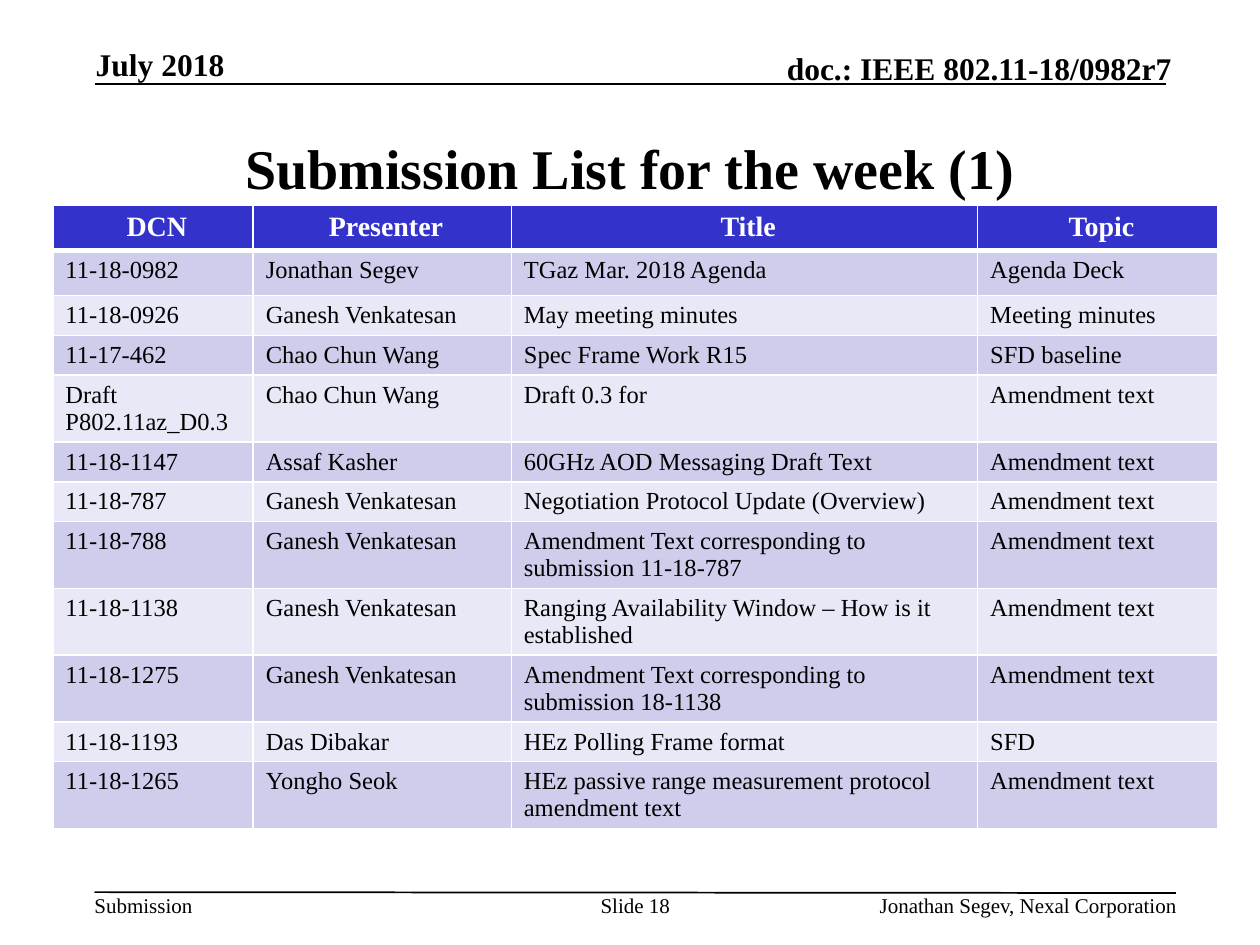
import pptx
import pptx.util
import pptx.dml.color
import pptx.enum.shapes
import pptx.enum.text
import pptx.oxml
import pptx.oxml.ns

Pt = pptx.util.Pt
ALIGN = pptx.enum.text.PP_ALIGN
ANCHOR = pptx.enum.text.MSO_ANCHOR

FONT = "Times New Roman"
BLACK, WHITE = "000000", "FFFFFF"
HEADER_FILL = "3333CC"
BAND_FILLS = ("CECEEC", "E8E8F6")

TITLE = "Submission List for the week (1)"
HEADINGS = ("DCN", "Presenter", "Title", "Topic")
SUBMISSIONS = [
    ("11-18-0982", "Jonathan Segev", "TGaz Mar. 2018 Agenda", "Agenda Deck"),
    ("11-18-0926", "Ganesh Venkatesan", "May meeting minutes", "Meeting minutes"),
    ("11-17-462", "Chao Chun Wang", "Spec Frame Work R15", "SFD baseline"),
    ("Draft P802.11az_D0.3", "Chao Chun Wang", "Draft 0.3 for", "Amendment text"),
    ("11-18-1147", "Assaf Kasher", "60GHz AOD Messaging Draft Text", "Amendment text"),
    ("11-18-787", "Ganesh Venkatesan", "Negotiation Protocol Update (Overview)", "Amendment text"),
    ("11-18-788", "Ganesh Venkatesan", "Amendment Text corresponding to submission 11-18-787",
     "Amendment text"),
    ("11-18-1138", "Ganesh Venkatesan", "Ranging Availability Window – How is it established",
     "Amendment text"),
    ("11-18-1275", "Ganesh Venkatesan", "Amendment Text corresponding to submission 18-1138",
     "Amendment text"),
    ("11-18-1193", "Das Dibakar", "HEz Polling Frame format", "SFD"),
    ("11-18-1265", "Yongho Seok", "HEz passive range measurement protocol amendment text",
     "Amendment text"),
]
# text, (left, top, width, height), size, bold, alignment, anchor
MARGIN_TEXTS = [
    ("Submission", (54, 510, 56, 14.5), 12, False, ALIGN.LEFT, ANCHOR.TOP),
    ("doc.: IEEE 802.11-18/0982r7", (393.8, 28, 275.8, 21.5), 18, True, ALIGN.RIGHT, ANCHOR.BOTTOM),
    ("Slide 18", (342, 510, 42, 29), 12, False, ALIGN.CENTER, ANCHOR.TOP),
    ("Jonathan Segev, Nexal Corporation", (422, 510, 250.5, 14.5), 12, False, ALIGN.RIGHT, ANCHOR.TOP),
    ("July 2018", (54.7, 26, 147.6, 21.5), 18, True, ALIGN.LEFT, ANCHOR.BOTTOM),
]
RULES = [(54, 48, 666, 48), (54, 509.8, 672, 510.3)]

TABLE_LEFT, TABLE_TOP = 30.2, 117
COLUMN_WIDTHS = (114.5, 147.5, 266.5, 137.2)
TALL_ROW, ONE_LINE_ROW, TWO_LINE_ROW = 26, 22.7, 38.2
DCN_CHARS, TITLE_CHARS = 12, 40


def rgb(value):
    return pptx.dml.color.RGBColor.from_string(value)


def write(frame, text, size, color=BLACK, bold=False, align=ALIGN.LEFT):
    paragraph = frame.paragraphs[0]
    paragraph.alignment = align
    run = paragraph.add_run()
    run.text = text
    run.font.name = FONT
    run.font.size = Pt(size)
    run.font.bold = bold
    run.font.color.rgb = rgb(color)


def set_margins(frame, left, top, right, bottom):
    frame.margin_left, frame.margin_top = Pt(left), Pt(top)
    frame.margin_right, frame.margin_bottom = Pt(right), Pt(bottom)


def add_rule(slide, ends):
    rule = slide.shapes.add_connector(
        pptx.enum.shapes.MSO_CONNECTOR.STRAIGHT, *map(Pt, ends))
    rule.line.color.rgb = rgb(BLACK)
    rule.line.width = Pt(1)
    properties = rule._element.spPr
    properties.append(properties.makeelement(pptx.oxml.ns.qn("a:effectLst"), {}))


def add_margin_text(slide, text, place, size, bold, align, anchor):
    frame = slide.shapes.add_textbox(*map(Pt, place)).text_frame
    frame.word_wrap = True
    frame.vertical_anchor = anchor
    set_margins(frame, 0, 0, 0, 0)
    write(frame, text, size, bold=bold, align=align)


def set_borders(cell, top=1, bottom=1):
    properties = cell._tc.get_or_add_tcPr()
    for side, width in (("L", 1), ("R", 1), ("T", top), ("B", bottom)):
        properties.append(pptx.oxml.parse_xml(
            f'<a:ln{side} {pptx.oxml.ns.nsdecls("a")} w="{Pt(width)}">'
            f'<a:solidFill><a:srgbClr val="{WHITE}"/></a:solidFill></a:ln{side}>'))


def row_height(index, row):
    if index < 2:
        return TALL_ROW
    wraps = len(row[0]) > DCN_CHARS or len(row[2]) > TITLE_CHARS
    return TWO_LINE_ROW if wraps else ONE_LINE_ROW


def add_submission_table(slide):
    rows = [HEADINGS] + SUBMISSIONS
    heights = [row_height(index, row) for index, row in enumerate(rows)]
    table = slide.shapes.add_table(
        len(rows), len(HEADINGS), Pt(TABLE_LEFT), Pt(TABLE_TOP),
        Pt(sum(COLUMN_WIDTHS)), Pt(sum(heights))).table
    for column, width in zip(table.columns, COLUMN_WIDTHS):
        column.width = Pt(width)
    for index, (row, height) in enumerate(zip(rows, heights)):
        table.rows[index].height = Pt(height)
        heading = index == 0
        for column, text in enumerate(row):
            cell = table.cell(index, column)
            set_margins(cell, 7.2, 3.6, 2.9 if heading else 7.2, 3.6)
            set_borders(cell, top=3 if index == 1 else 1, bottom=3 if heading else 1)
            cell.fill.solid()
            cell.fill.fore_color.rgb = rgb(HEADER_FILL if heading else BAND_FILLS[(index - 1) % 2])
            if heading:
                write(cell.text_frame, text, 16, WHITE, True, ALIGN.CENTER)
            else:
                write(cell.text_frame, text, 14)


def main():
    deck = pptx.Presentation()
    deck.slide_width, deck.slide_height = Pt(720), Pt(540)
    slide = deck.slides.add_slide(deck.slide_layouts[5])

    for ends in RULES:
        add_rule(slide, ends)

    title = slide.shapes.title
    title.left, title.top, title.width, title.height = map(Pt, (54, 54, 612, 83.5))
    title.text_frame.vertical_anchor = ANCHOR.MIDDLE
    set_margins(title.text_frame, 7.2, 3.6, 7.2, 3.6)
    write(title.text_frame, TITLE, 32, bold=True, align=ALIGN.CENTER)

    add_submission_table(slide)
    for margin_text in MARGIN_TEXTS:
        add_margin_text(slide, *margin_text)

    deck.save("out.pptx")


if __name__ == "__main__":
    main()
